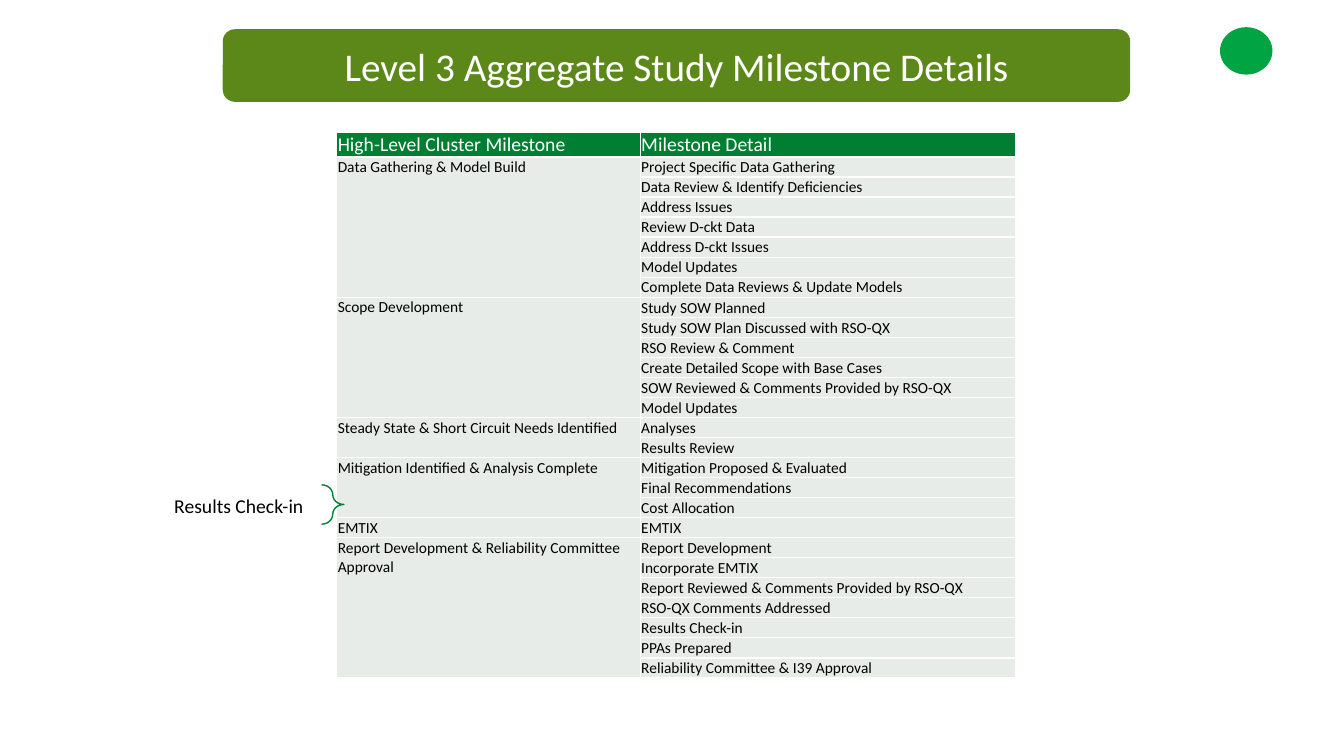
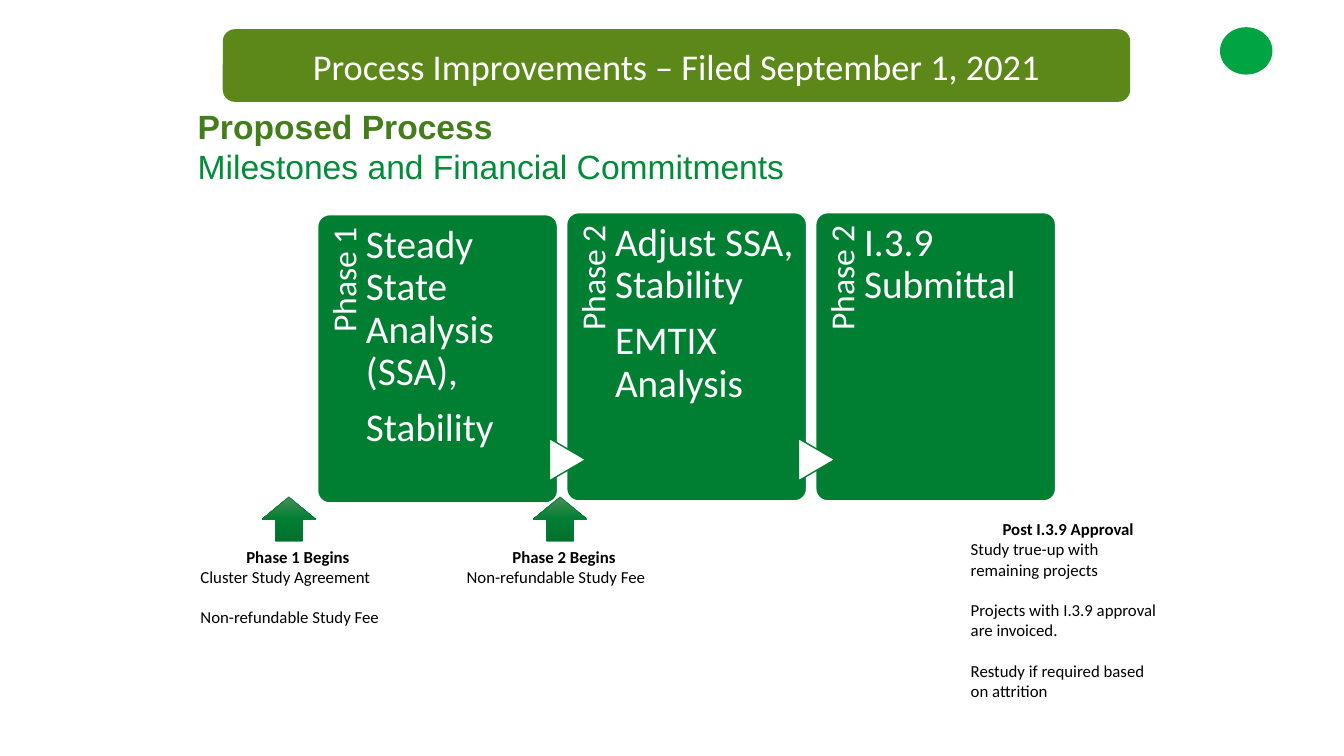
from dataclasses import dataclass

from lxml.etree import SubElement
from pptx import Presentation
from pptx.dml.color import RGBColor
from pptx.enum.shapes import MSO_SHAPE
from pptx.enum.text import MSO_ANCHOR, MSO_AUTO_SIZE, PP_ALIGN
from pptx.oxml.ns import qn
from pptx.util import Pt

MILESTONES = [
    ("Data Gathering & Model Build", [
        "Project Specific Data Gathering", "Data Review & Identify Deficiencies",
        "Address Issues", "Review D-ckt Data", "Address D-ckt Issues",
        "Model Updates", "Complete Data Reviews & Update Models"]),
    ("Scope Development", [
        "Study SOW Planned", "Study SOW Plan Discussed with RSO-QX",
        "RSO Review & Comment", "Create Detailed Scope with Base Cases",
        "SOW Reviewed & Comments Provided by RSO-QX", "Model Updates"]),
    ("Steady State & Short Circuit Needs Identified", ["Analyses", "Results Review"]),
    ("Mitigation Identified & Analysis Complete", [
        "Mitigation Proposed & Evaluated", "Final Recommendations", "Cost Allocation"]),
    ("EMTIX", ["EMTIX"]),
    ("Report Development & Reliability Committee Approval", [
        "Report Development", "Incorporate EMTIX",
        "Report Reviewed & Comments Provided by RSO-QX", "RSO-QX Comments Addressed",
        "Results Check-in", "PPAs Prepared", "Reliability Committee & I39 Approval"]),
]
HEADERS = ("High-Level Cluster Milestone", "Milestone Detail")

# Label, steps, top
PHASES = [
    ("Phase 1", ["Steady State Analysis (SSA),", "Stability"], 213),
    ("Phase 2", ["Adjust SSA, Stability", "EMTIX Analysis"], 211),
    ("Phase 2", ["I.3.9 Submittal"], 211),
]

# Heading, lines, left, top, height
NOTES = [
    ("Phase 1 Begins", ["Cluster Study Agreement", "Non-refundable Study Fee"], 189, 537, 131),
    ("Phase 2 Begins", ["Non-refundable Study Fee"], 453, 537, 71),
    ("Post I.3.9 Approval", [
        "Study true-up with remaining projects",
        "Projects with I.3.9 approval are invoiced.",
        "Restudy if required based on attrition"], 953, 510, 192),
]


@dataclass(frozen=True)
class Theme:
    font: str = "Calibri"
    heading_font: str = "Arial"
    banner: str = "5C881A"
    green: str = "007F33"
    row: str = "E7ECE8"
    heading: str = "447D1B"
    subheading: str = "008C38"
    emblem: str = "00A443"
    white: str = "FFFFFF"
    black: str = "000000"
    arrow_stops: tuple = ((0, "4B8D57"), (50, "007F33"), (100, "00712D"))
    title_pt: float = 28
    heading_pt: float = 24
    label_pt: float = 24
    step_pt: float = 28
    callout_pt: float = 14
    cell_pt: float = 11
    note_pt: float = 12


T = Theme()
PX = 9144  # 100 px to the inch


def px(*values):
    return [v * PX for v in values]


def rgb(code):
    return RGBColor.from_string(code)


def style(p, size, color, font=T.font, bold=False, align=None):
    if align is not None:
        p.alignment = align
    for r in p.runs:
        r.font.size, r.font.name, r.font.bold = Pt(size), font, bold
        r.font.color.rgb = rgb(color)


def set_margins(item, left, top, right, bottom):
    item.margin_left, item.margin_top, item.margin_right, item.margin_bottom = px(
        left, top, right, bottom)


def add_shape(s, kind, box, fill=None, line=None, weight=1):
    sp = s.shapes.add_shape(kind, *px(*box))
    sp.shadow.inherit = False
    if fill:
        sp.fill.solid()
        sp.fill.fore_color.rgb = rgb(fill)
    else:
        sp.fill.background()
    if line:
        sp.line.color.rgb = rgb(line)
        sp.line.width = Pt(weight)
    else:
        sp.line.fill.background()
    return sp


def add_text(s, box, lines, margins=(10, 5, 10, 5), wrap=True):
    sp = s.shapes.add_textbox(*px(*box))
    tf = sp.text_frame
    tf.word_wrap = wrap
    set_margins(tf, *margins)
    tf.text = "\n".join(lines)
    return sp


def place(sp, *box):
    sp.left, sp.top, sp.width, sp.height = px(*box)
    sp.text_frame.auto_size = MSO_AUTO_SIZE.NONE


def add_slide(prs, layout, title, size=T.title_pt):
    """Add a slide with the title on a rounded banner and the corner emblem."""
    s = prs.slides.add_slide(prs.slide_layouts.get_by_name(layout))
    box = (221, 29, 900, 72)
    sp = s.shapes.title
    banner = add_shape(s, MSO_SHAPE.ROUNDED_RECTANGLE, box, T.banner)
    sp.element.addprevious(banner.element)  # the title stays in front
    place(sp, *box)
    tf = sp.text_frame
    tf.text = title
    tf.vertical_anchor = MSO_ANCHOR.MIDDLE
    style(tf.paragraphs[0], size, T.white, align=PP_ALIGN.CENTER)
    add_shape(s, MSO_SHAPE.OVAL, (1210, 27, 52, 47), T.emblem)
    return s


def set_cell(cell, text, size, color, fill, anchor=MSO_ANCHOR.BOTTOM):
    cell.text = text
    set_margins(cell, 1, 1, 1, 0)
    cell.vertical_anchor = anchor
    style(cell.text_frame.paragraphs[0], size, color)
    tc_pr = cell._tc.get_or_add_tcPr()
    for side in ("a:lnL", "a:lnR", "a:lnT", "a:lnB"):
        ln = SubElement(tc_pr, qn(side), w=str(Pt(1)))
        SubElement(SubElement(ln, qn("a:solidFill")), qn("a:srgbClr"), val=T.white)
    cell.fill.solid()
    cell.fill.fore_color.rgb = rgb(fill)


def add_milestone_table(s):
    count = sum(len(details) for _, details in MILESTONES)
    header_h, row_h, widths = 24, 19, (301, 372)
    box = px(334, 131, sum(widths), header_h + count * row_h)
    table = s.shapes.add_table(count + 1, 2, *box).table
    table.first_row = table.horz_banding = False
    for column, width in zip(table.columns, widths):
        column.width = width * PX
    for i, row in enumerate(table.rows):
        row.height = (row_h if i else header_h) * PX
    for i, text in enumerate(HEADERS):
        set_cell(table.cell(0, i), text, T.callout_pt, T.white, T.green)

    first = 1
    for milestone, details in MILESTONES:
        last = first + len(details) - 1
        for i, detail in enumerate(details, first):
            set_cell(table.cell(i, 0), milestone if i == first else "",
                     T.cell_pt, T.black, T.row, MSO_ANCHOR.TOP)
            set_cell(table.cell(i, 1), detail, T.cell_pt, T.black, T.row)
        if last > first:
            table.cell(first, 0).merge(table.cell(last, 0))
        first = last + 1


def add_headings(s):
    body = s.placeholders[1]
    place(body, 186, 100, 990, 100)
    tf = body.text_frame
    tf.text = "Proposed Process\nMilestones and Financial Commitments"
    for p, color, bold in zip(tf.paragraphs, (T.heading, T.subheading), (True, False)):
        style(p, T.heading_pt, color, T.heading_font, bold)
        p.space_before = Pt(0)
        p_pr = p._p.get_or_add_pPr()
        p_pr.set("marL", "0")
        p_pr.set("indent", "0")
        SubElement(p_pr, qn("a:buNone"))


def add_phase(s, i, label, steps, top):
    left, width, height = 315 + 247 * i, 238, 286
    card = add_shape(s, MSO_SHAPE.ROUNDED_RECTANGLE, (left, top, width, height), T.green, T.white)
    card.adjustments[0] = 0.05

    tag = add_text(s, (left - 93, top + 94, 235, 48), [label], (0, 9, 12, 0))
    tag.rotation = 270
    p = tag.text_frame.paragraphs[0]
    p.line_spacing = 0.9
    style(p, T.label_pt, T.white, align=PP_ALIGN.RIGHT)

    if i:
        arrow = add_shape(s, MSO_SHAPE.FLOWCHART_EXTRACT, (left - 20, 438, 42, 36),
                          T.white, T.green)
        arrow.rotation = 90

    text = add_text(s, (left + 48, top, 178, height), steps, (0, 10, 0, 0))
    for p in text.text_frame.paragraphs:
        p.line_spacing, p.space_after = 0.9, Pt(0.35 * T.step_pt)
        style(p, T.step_pt, T.white)


def add_note(s, heading, lines, left, top, height):
    sp = add_text(s, (left, top, 213, height), [heading, *lines])
    title, *rest = sp.text_frame.paragraphs
    style(title, T.note_pt, T.black, bold=True, align=PP_ALIGN.CENTER)
    for i, p in enumerate(rest):
        style(p, T.note_pt, T.black)
        if i:
            p.space_before = Pt(1.22 * T.note_pt)


def add_start_arrow(s, left):
    sp = add_shape(s, MSO_SHAPE.UP_ARROW, (left, 493, 53, 44), line=T.green, weight=0.5)
    sp.fill.gradient()
    sp.fill.gradient_angle = 270
    stops = sp.element.spPr.find(qn("a:gradFill")).find(qn("a:gsLst"))
    for stop in list(stops):
        stops.remove(stop)
    for percent, color in T.arrow_stops:
        stop = SubElement(stops, qn("a:gs"), pos=str(percent * 1000))
        SubElement(stop, qn("a:srgbClr"), val=color)


def build_milestones(prs):
    s = add_slide(prs, "Title Only", "Level 3 Aggregate Study Milestone Details")
    add_milestone_table(s)
    brace = add_shape(s, MSO_SHAPE.RIGHT_BRACE, (319, 481, 22, 39), line=T.green)
    brace.adjustments[0], brace.adjustments[1] = 0.76, 0.5
    callout = add_text(s, (163, 485, 174, 34), ["Results Check-in"], wrap=False)
    style(callout.text_frame.paragraphs[0], T.callout_pt, T.black)


def build_process(prs):
    s = add_slide(prs, "Title and Content",
                  "Process Improvements – Filed September 1, 2021", 25.9)
    add_headings(s)
    for i, phase in enumerate(PHASES):
        add_phase(s, i, *phase)
    for note in NOTES:
        add_note(s, *note)
    for left in (260, 529):
        add_start_arrow(s, left)


def main():
    prs = Presentation()
    prs.slide_width, prs.slide_height = px(1333, 750)
    build_milestones(prs)
    build_process(prs)
    prs.save("out.pptx")


if __name__ == "__main__":
    main()
